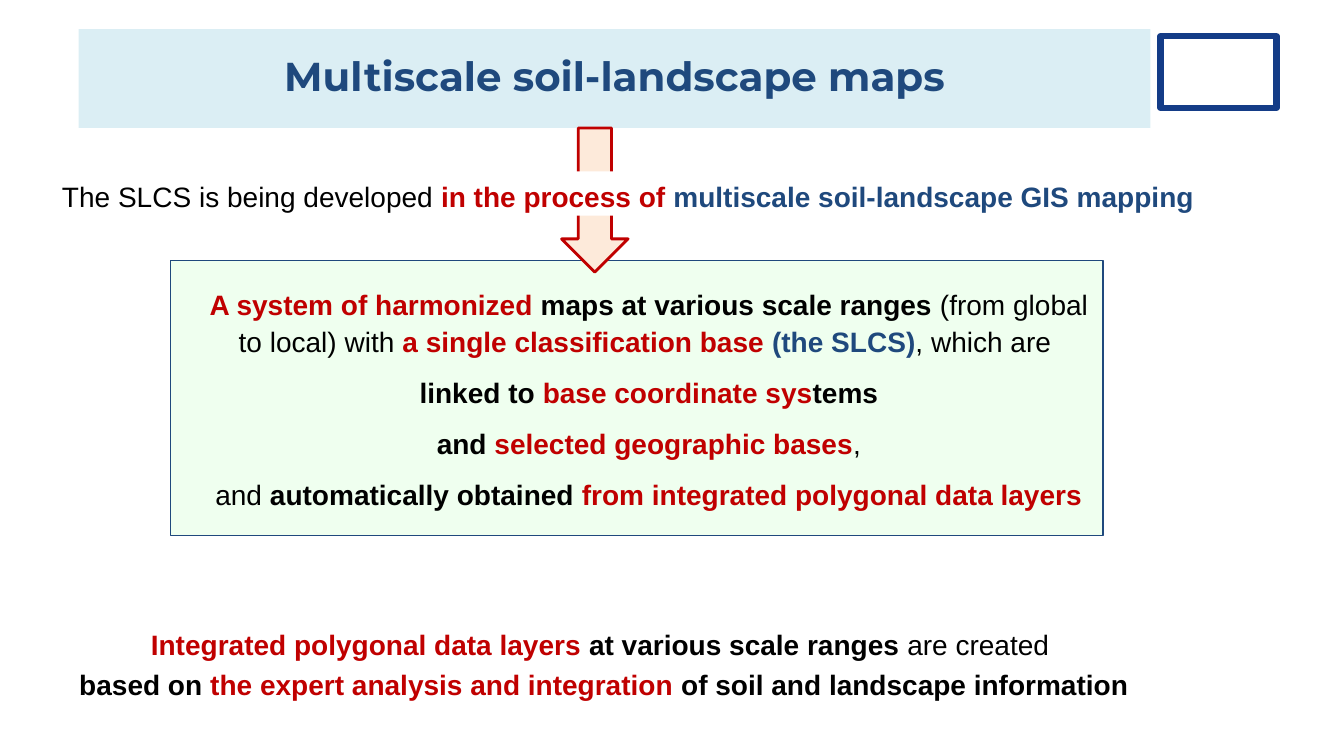
from pptx import Presentation
from pptx.dml.color import RGBColor
from pptx.enum.shapes import MSO_SHAPE
from pptx.enum.text import MSO_ANCHOR, PP_ALIGN
from pptx.util import Inches, Pt

RECT = MSO_SHAPE.RECTANGLE
DOWN_ARROW = MSO_SHAPE.DOWN_ARROW
TOP = MSO_ANCHOR.TOP
MIDDLE = MSO_ANCHOR.MIDDLE
CENTER = PP_ALIGN.CENTER

COLORS = {
    "white": "FFFFFF",
    "black": "000000",
    "red": "C00000",
    "blue": "1F497D",
    "frame": "143C87",
    "title": "DBEEF4",
    "mint": "EFFFEF",
    "peach": "FDEADA",
}


def rgb(name):
    return RGBColor.from_string(COLORS[name])


class SlideBuilder:
    """Holds the text style and the current slide, and adds elements to it."""

    def __init__(self, prs, font="Arial", size=20):
        self.slide = prs.slides.add_slide(prs.slide_layouts[6])
        self.font = font
        self.size = size

    def shape(self, kind, box, fill, line=None, width=1):
        s = self.slide.shapes.add_shape(kind, *map(Inches, box))
        s.shadow.inherit = False
        s.fill.solid()
        s.fill.fore_color.rgb = rgb(fill)
        if line:
            s.line.color.rgb = rgb(line)
            s.line.width = Pt(width)
        else:
            s.line.fill.background()
        return s

    def textbox(self, box):
        return self.slide.shapes.add_textbox(*map(Inches, box))

    def text(self, s, paragraphs, anchor=TOP, spacing=1.1, after=0, indent=0,
             font=None, size=None):
        tf = s.text_frame
        tf.word_wrap = True
        tf.vertical_anchor = anchor
        for i, runs in enumerate(paragraphs):
            p = tf.add_paragraph() if i else tf.paragraphs[0]
            p.alignment = CENTER
            p.line_spacing = spacing
            p.space_after = Pt(after)
            if indent:
                pPr = p._p.get_or_add_pPr()
                pPr.set("marL", str(Inches(indent)))
                pPr.set("indent", "0")
            for words, color, bold in runs:
                r = p.add_run()
                r.text = words
                r.font.name = font or self.font
                r.font.size = Pt(size or self.size)
                r.font.bold = bold
                r.font.color.rgb = rgb(color)


def main():
    prs = Presentation()
    prs.slide_width = Inches(13.33)
    prs.slide_height = Inches(7.5)
    b = SlideBuilder(prs)

    b.shape(RECT, (11.51, 0.36, 1.15, 0.71), "white", "frame", 4.5)

    title = b.shape(RECT, (0.78, 0.29, 10.63, 0.98), "title")
    b.text(title, [[("Multiscale soil-landscape maps", "blue", True)]],
           MIDDLE, 0.9, font="Montserrat", size=28.8)

    system = b.shape(RECT, (1.69, 2.58, 9.25, 2.73), "mint", "blue", 0.75)
    b.text(system, [
        [("A system of harmonized", "red", True),
         (" maps at various scale ranges ", "black", True),
         ("(from global to local) with ", "black", False),
         ("a single classification base ", "red", True),
         ("(the SLCS)", "blue", True),
         (", which are ", "black", False)],
        [("linked to ", "black", True),
         ("base coordinate sys", "red", True),
         ("tems", "black", True)],
        [("and ", "black", True),
         ("selected geographic bases", "red", True),
         (",", "black", False)],
        [("and ", "black", False),
         ("automatically obtained ", "black", True),
         ("from integrated polygonal data layers", "red", True)],
    ], MIDDLE, after=10, indent=0.24)

    b.shape(DOWN_ARROW, (5.57, 1.27, 0.66, 1.43), "peach", "red", 2)

    process = b.shape(RECT, (0.51, 1.7, 11.44, 0.44), "white")
    b.text(process, [
        [("The SLCS is being developed ", "black", False),
         ("in the process of ", "red", True),
         ("multiscale soil-landscape GIS mapping", "blue", True)],
    ])

    layers = b.textbox((0.18, 6.11, 11.62, 0.87))
    b.text(layers, [
        [("Integrated polygonal data layers ", "red", True),
         ("at various scale ranges ", "black", True),
         ("are created ", "black", False)],
        [("based on ", "black", True),
         ("the expert analysis and integration ", "red", True),
         ("of soil and landscape information", "black", True)],
    ], spacing=1.2)

    prs.save("out.pptx")


if __name__ == "__main__":
    main()
